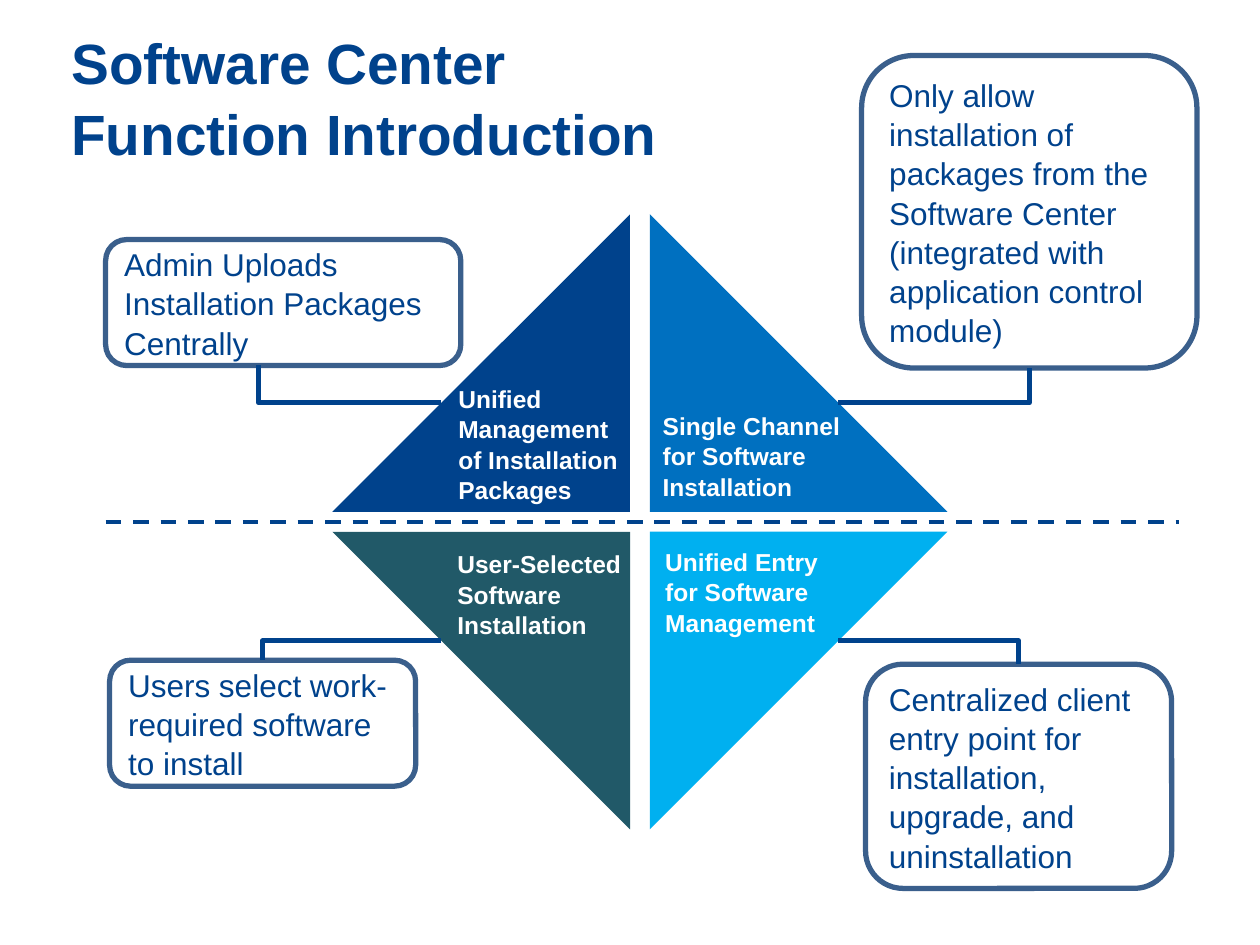
from dataclasses import dataclass

import pptx
import pptx.dml.color
import pptx.enum.dml
import pptx.enum.shapes
import pptx.enum.text
import pptx.oxml.ns
import pptx.util
from lxml import etree

Cm = pptx.util.Cm
Pt = pptx.util.Pt
RGBColor = pptx.dml.color.RGBColor
Anchor = pptx.enum.text.MSO_ANCHOR
Shape = pptx.enum.shapes.MSO_SHAPE
Connector = pptx.enum.shapes.MSO_CONNECTOR

NAVY = RGBColor(0x00, 0x42, 0x8C)
BLUE = RGBColor(0x00, 0x70, 0xC0)
SKY = RGBColor(0x00, 0xB0, 0xF0)
TEAL = RGBColor(0x21, 0x59, 0x68)
STEEL = RGBColor(0x3A, 0x5F, 0x8C)
WHITE = RGBColor(0xFF, 0xFF, 0xFF)

# All lengths are in centimetres.
CENTER_X, CENTER_Y = 12.9, 10.52
TRIANGLE_SIDE = 6.0
HALF_GAP = 0.2
LINK_DX, LINK_DY = 4.0, 2.4  # where a link leaves a triangle's long side


@dataclass(frozen=True)
class Area:
    left: float
    top: float
    width: float
    height: float

    def lengths(self) -> tuple:
        return Cm(self.left), Cm(self.top), Cm(self.width), Cm(self.height)


@dataclass(frozen=True)
class Quadrant:
    side_x: int  # -1 left, 1 right
    side_y: int  # -1 top, 1 bottom
    rotation: int
    color: RGBColor
    label: str
    label_area: Area
    note: str
    note_area: Area
    link_x: float  # where the link meets the note


QUADRANTS = [
    Quadrant(-1, -1, 270, NAVY,
             "Unified Management\nof Installation Packages", Area(8.99, 7.59, 4.22, 3.25),
             "Admin Uploads Installation Packages Centrally",
             Area(2.13, 4.83, 7.16, 2.54), 5.21),
    Quadrant(1, -1, 0, BLUE,
             "Single Channel for Software Installation", Area(13.11, 8.13, 4.27, 2.64),
             "Only allow installation of packages from the Software Center "
             "(integrated with application control module)",
             Area(17.37, 1.12, 6.76, 6.3), 20.75),
    Quadrant(-1, 1, 180, TEAL,
             "User-Selected Software Installation", Area(8.97, 10.92, 4.11, 2.64),
             "Users select work-required software to install",
             Area(2.21, 13.31, 6.17, 2.54), 5.3),
    Quadrant(1, 1, 90, SKY,
             "Unified Entry for Software Management", Area(13.16, 10.87, 4.29, 2.64),
             "Centralized client entry point for installation, upgrade, and uninstallation",
             Area(17.45, 13.39, 6.17, 4.52), 20.53),
]


def write_text(box, text: str, *, size: float, color: RGBColor,
               bold: bool = False, anchor=Anchor.TOP) -> None:
    frame = box.text_frame
    frame.word_wrap = True
    frame.vertical_anchor = anchor
    frame.text = text
    for para in frame.paragraphs:
        para.alignment = pptx.enum.text.PP_ALIGN.LEFT
        para.line_spacing = 1.04
        for span in para.runs:
            span.font.name = "Arial"
            span.font.size = Pt(size)
            span.font.bold = bold
            span.font.color.rgb = color


def draw_line(page, kind, start: tuple, end: tuple, width: float):
    line = page.shapes.add_connector(kind, *(Cm(value) for value in start + end))
    line.line.color.rgb = NAVY
    line.line.width = Pt(width)
    etree.SubElement(line._element.spPr, pptx.oxml.ns.qn("a:effectLst"))
    return line


def draw_triangle(page, quadrant: Quadrant) -> None:
    reach = HALF_GAP + TRIANGLE_SIDE
    left = CENTER_X + (HALF_GAP if quadrant.side_x > 0 else -reach)
    top = CENTER_Y + (HALF_GAP if quadrant.side_y > 0 else -reach)
    area = Area(left, top, TRIANGLE_SIDE, TRIANGLE_SIDE)
    triangle = page.shapes.add_shape(Shape.RIGHT_TRIANGLE, *area.lengths())
    triangle.rotation = quadrant.rotation
    triangle.shadow.inherit = False
    triangle.fill.solid()
    triangle.fill.fore_color.rgb = quadrant.color
    triangle.line.fill.background()


def draw_label(page, quadrant: Quadrant) -> None:
    box = page.shapes.add_textbox(*quadrant.label_area.lengths())
    write_text(box, quadrant.label, size=14, color=WHITE, bold=True)


def draw_note(page, quadrant: Quadrant) -> None:
    box = page.shapes.add_shape(Shape.ROUNDED_RECTANGLE, *quadrant.note_area.lengths())
    box.shadow.inherit = False
    box.fill.background()
    box.line.color.rgb = STEEL
    box.line.width = Pt(3)
    write_text(box, quadrant.note, size=18, color=NAVY, anchor=Anchor.MIDDLE)


def draw_link(page, quadrant: Quadrant) -> None:
    """Run sideways from the triangle, then turn once to reach the note."""
    area = quadrant.note_area
    start = (CENTER_X + quadrant.side_x * LINK_DX, CENTER_Y + quadrant.side_y * LINK_DY)
    end = (quadrant.link_x, area.top if quadrant.side_y > 0 else area.top + area.height)
    link = draw_line(page, Connector.ELBOW, start, end, 3)
    geometry = link._element.spPr.find(pptx.oxml.ns.qn("a:prstGeom"))
    geometry.set("prst", "bentConnector2")


def main() -> None:
    deck = pptx.Presentation()
    deck.slide_width, deck.slide_height = Cm(25.4), Cm(19.05)
    page = deck.slides.add_slide(deck.slide_layouts[6])

    divider = draw_line(page, Connector.STRAIGHT, (2.13, CENTER_Y), (23.77, CENTER_Y), 2.25)
    divider.line.dash_style = pptx.enum.dml.MSO_LINE.DASH
    for draw in (draw_triangle, draw_label, draw_note, draw_link):
        for quadrant in QUADRANTS:
            draw(page, quadrant)

    title = page.shapes.add_textbox(*Area(1.19, 0.86, 13.23, 2.16).lengths())
    write_text(title, "Software Center Function Introduction",
               size=32.4, color=NAVY, bold=True, anchor=Anchor.MIDDLE)
    deck.save("out.pptx")


if __name__ == "__main__":
    main()
